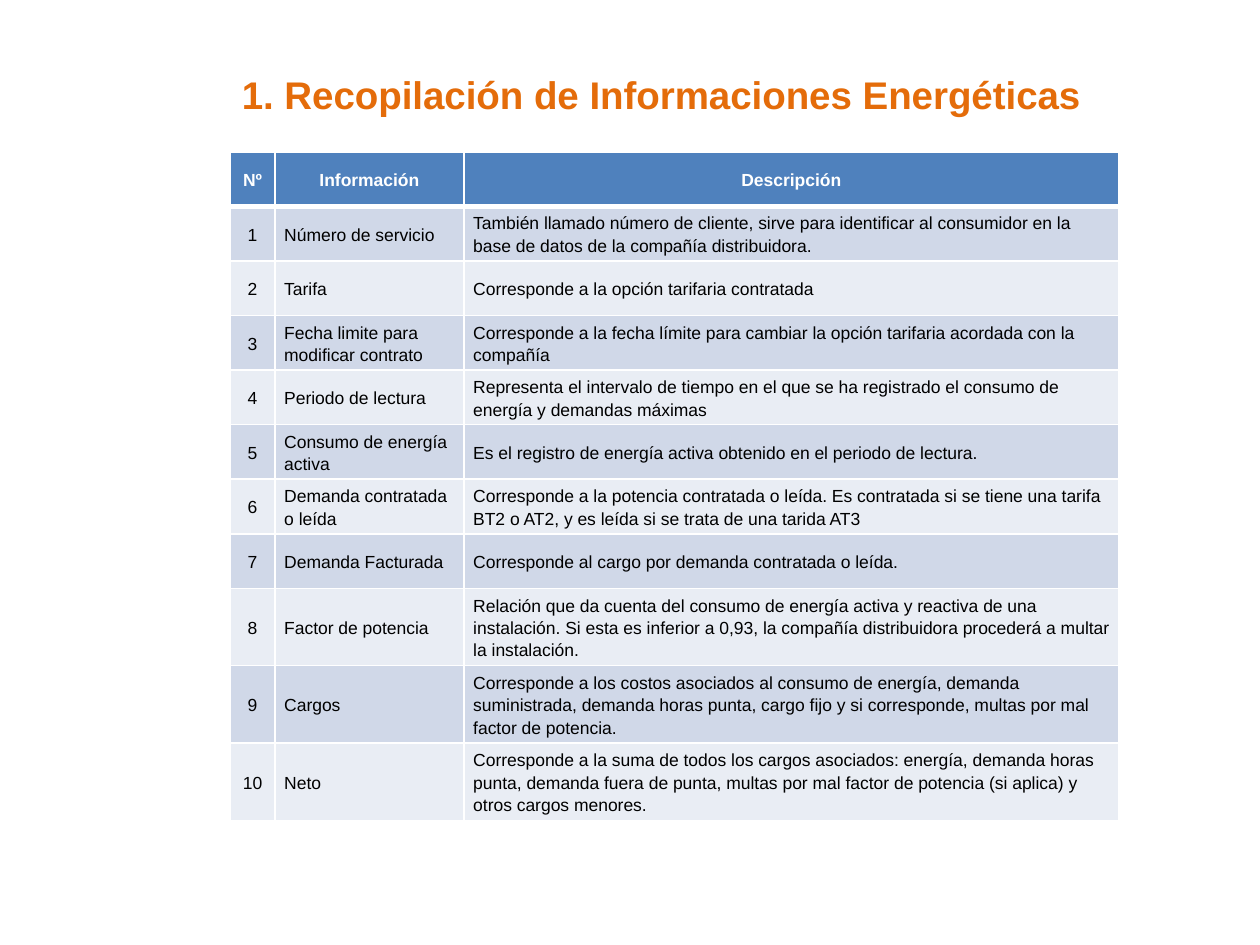
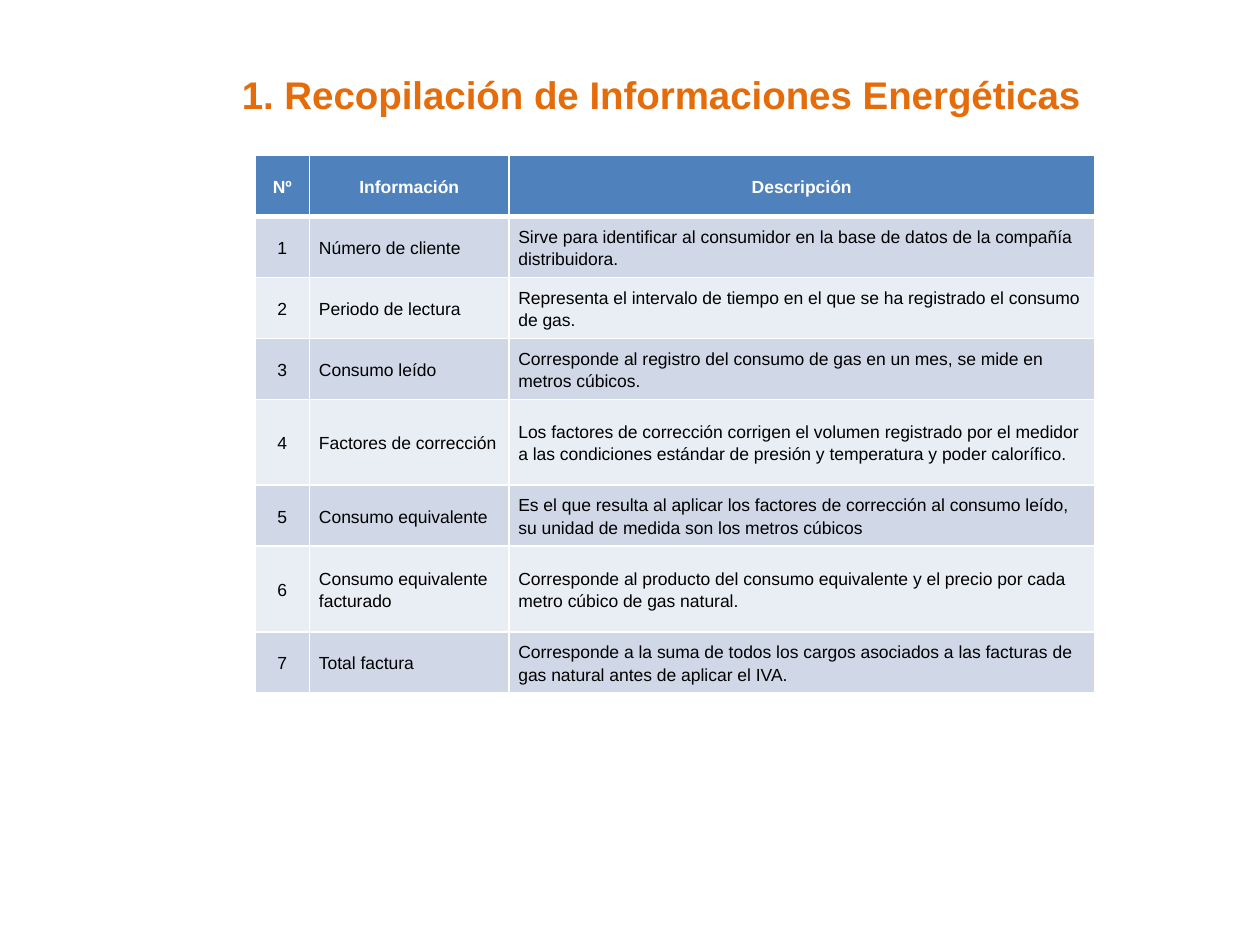
from lxml import etree
from pptx import Presentation
from pptx.dml.color import RGBColor
from pptx.enum.text import MSO_ANCHOR, PP_ALIGN
from pptx.oxml.ns import qn
from pptx.util import Cm, Pt

MIDDLE = MSO_ANCHOR.MIDDLE
LEFT, CENTER = PP_ALIGN.LEFT, PP_ALIGN.CENTER
TITLE_ONLY = 5

FONT = "Arial"
COLORS = {
    "title": "E46C0A",
    "head": "4F81BD",
    "odd": "D0D8E8",
    "even": "E9EDF4",
    "white": "FFFFFF",
    "black": "000000",
}
TITLE = "1. Recopilación de Informaciones Energéticas"
HEADS = ("Nº", "Información", "Descripción")

POWER = [
    ("Número de servicio",
     "También llamado número de cliente, sirve para identificar al consumidor "
     "en la base de datos de la compañía distribuidora."),
    ("Tarifa", "Corresponde a la opción tarifaria contratada"),
    ("Fecha limite para modificar contrato",
     "Corresponde a la fecha límite para cambiar la opción tarifaria acordada "
     "con la compañía"),
    ("Periodo de lectura",
     "Representa el intervalo de tiempo en el que se ha registrado el consumo "
     "de energía y demandas máximas"),
    ("Consumo de energía activa",
     "Es el registro de energía activa obtenido en el periodo de lectura."),
    ("Demanda contratada o leída",
     "Corresponde a la potencia contratada o leída. Es contratada si se tiene "
     "una tarifa BT2 o AT2, y es leída si se trata de una tarida AT3"),
    ("Demanda Facturada",
     "Corresponde al cargo por demanda contratada o leída."),
    ("Factor de potencia",
     "Relación que da cuenta del consumo de energía activa y reactiva de una "
     "instalación. Si esta es inferior a 0,93, la compañía distribuidora "
     "procederá a multar la instalación."),
    ("Cargos",
     "Corresponde a los costos asociados al consumo de energía, demanda "
     "suministrada, demanda horas punta, cargo fijo y si corresponde, multas "
     "por mal factor de potencia."),
    ("Neto",
     "Corresponde a la suma de todos los cargos asociados: energía, demanda "
     "horas punta, demanda fuera de punta, multas por mal factor de potencia "
     "(si aplica) y otros cargos menores."),
]

GAS = [
    ("Número de cliente",
     "Sirve para identificar al consumidor en la base de datos de la compañía "
     "distribuidora."),
    ("Periodo de lectura",
     "Representa el intervalo de tiempo en el que se ha registrado el consumo "
     "de gas."),
    ("Consumo leído",
     "Corresponde al registro del consumo de gas en un mes, se mide en metros "
     "cúbicos."),
    ("Factores de corrección",
     "Los factores de corrección corrigen el volumen registrado por el medidor "
     "a las condiciones estándar de presión y temperatura y poder calorífico."),
    ("Consumo equivalente",
     "Es el que resulta al aplicar los factores de corrección al consumo "
     "leído, su unidad de medida son los metros cúbicos"),
    ("Consumo equivalente facturado",
     "Corresponde al producto del consumo equivalente y el precio por cada "
     "metro cúbico de gas natural."),
    ("Total factura",
     "Corresponde a la suma de todos los cargos asociados a las facturas de "
     "gas natural antes de aplicar el IVA."),
]


class Deck:
    def __init__(self):
        self.prs = Presentation()
        self.prs.slide_width, self.prs.slide_height = Cm(25.4), Cm(19.05)
        self.slide = None

    def add(self):
        layout = self.prs.slide_layouts[TITLE_ONLY]
        self.slide = self.prs.slides.add_slide(layout)

    def style(self, par, size, color, bold, align):
        par.alignment = align
        for run in par.runs:
            font = run.font
            font.name, font.size, font.bold = FONT, Pt(size), bold
            font.color.rgb = RGBColor.from_string(COLORS[color])

    def title(self, text):
        box = self.slide.shapes.title
        box.left, box.top = Cm(4.62), Cm(1.32)
        box.width, box.height = Cm(18.26), Cm(1.14)
        frame = box.text_frame
        frame.text = text
        frame.vertical_anchor = MIDDLE
        self.style(frame.paragraphs[0], 22, "title", True, LEFT)

    def edge(self, cell, widths):
        """Draw white borders; widths are points for left, right, top, bottom."""
        props = cell._tc.get_or_add_tcPr()
        for i, (side, width) in enumerate(zip("LRTB", widths)):
            line = etree.Element(qn(f"a:ln{side}"), w=str(Pt(width)))
            fill = etree.SubElement(line, qn("a:solidFill"))
            etree.SubElement(fill, qn("a:srgbClr"), val=COLORS["white"])
            props.insert(i, line)

    def cell(self, cell, text, row, col):
        head = row == 0
        fill = "head" if head else "odd" if row % 2 else "even"
        cell.fill.solid()
        cell.fill.fore_color.rgb = RGBColor.from_string(COLORS[fill])
        cell.vertical_anchor = MIDDLE
        cell.margin_left = cell.margin_right = Cm(0.19)
        cell.margin_top = cell.margin_bottom = 0
        cell.text_frame.text = text
        par = cell.text_frame.paragraphs[0]
        par.line_spacing = 1.15
        self.style(par, 10, "white" if head else "black", head,
                   CENTER if head or col == 0 else LEFT)
        self.edge(cell, (1, 1, 3 if row == 1 else 1, 3 if head else 1))

    def table(self, items, left, top, widths, low, high, tall):
        """Number the items; rows listed in tall get the high height."""
        rows = [HEADS] + [(str(i), *item) for i, item in enumerate(items, 1)]
        sizes = [high if i in tall else low for i in range(len(rows))]
        grid = self.slide.shapes.add_table(
            len(rows), len(HEADS), Cm(left), Cm(top),
            Cm(sum(widths)), Cm(sum(sizes))).table
        for col, width in zip(grid.columns, widths):
            col.width = Cm(width)
        for r, (texts, size) in enumerate(zip(rows, sizes)):
            grid.rows[r].height = Cm(size)
            for c, text in enumerate(texts):
                self.cell(grid.cell(r, c), text, r, c)


def main():
    deck = Deck()
    pages = [
        (POWER, 4.64, 3.06, (0.9, 3.81, 13.2), 1.1, 1.56, (8, 9, 10)),
        (GAS, 5.14, 3.13, (1.1, 4.02, 11.8), 1.23, 1.73, (4, 6)),
    ]
    for page in pages:
        deck.add()
        deck.title(TITLE)
        deck.table(*page)
    deck.prs.save("out.pptx")


if __name__ == "__main__":
    main()
